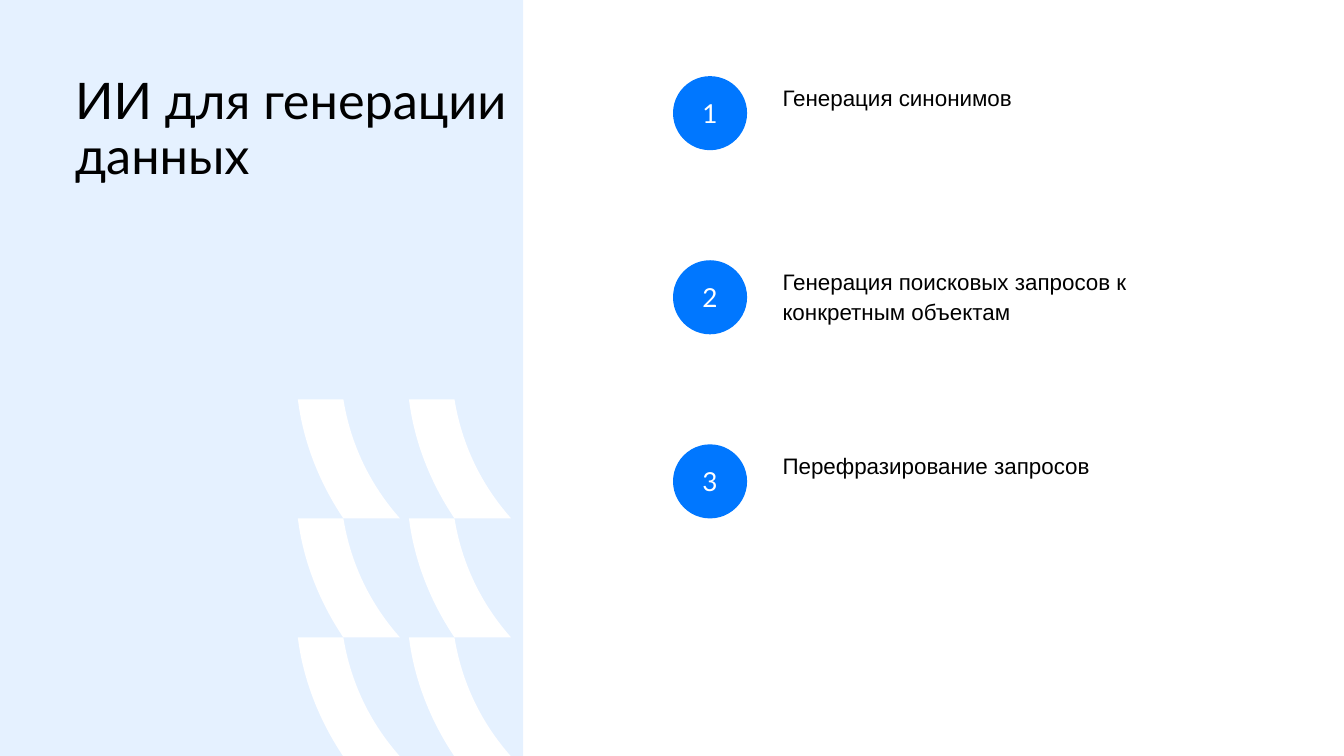
import pptx
import pptx.util
import pptx.dml.color
import pptx.enum.shapes
import pptx.enum.text
import pptx.oxml
import lxml.etree

Cm = pptx.util.Cm
qn = pptx.oxml.ns.qn
ALIGN = pptx.enum.text.PP_ALIGN
ANCHOR = pptx.enum.text.MSO_ANCHOR
SHAPE = pptx.enum.shapes.MSO_SHAPE

TITLE = "ИИ для генерации данных"
ITEMS = [
    "Генерация синонимов",
    "Генерация поисковых запросов к конкретным объектам",
    "Перефразирование запросов",
]

THEME = {
    "accent": "0077FF", "paper": "FFFFFF",
    "title": {"name": "Lato", "size": 27, "color": "000000"},
    "item": {"name": "Arial", "size": 12, "color": "000000"},
    "number": {"name": "Lato", "size": 14, "color": "FFFFFF"},
}

SLIDE_W, SLIDE_H = 25.4, 14.29
PANEL_W = 9.89
TOP, ROW_STEP = 1.44, 3.48
CIRCLE_X, CIRCLE_D = 12.72, 1.4
TEXT_X, TEXT_W, TEXT_H = 14.79, 7.19, 2.57

PATTERN_X, PATTERN_Y = 5.63, 7.55
PATTERN_COLS, PATTERN_ROWS = 2, 3
TILE_DX, TILE_DY = 2.1, 2.25
RIGHT_EDGE = [(0.86, 0), (1.0, 0.86), (1.37, 1.62), (1.93, TILE_DY)]
LEFT_EDGE = [(0.86, TILE_DY), (0.41, 1.58), (0.1, 0.81), (0, 0)]


def rgb(value):
    return pptx.dml.color.RGBColor.from_string(value)


def paint(sp, color, alpha=None):
    sp.shadow.inherit = False
    sp.fill.solid()
    sp.fill.fore_color.rgb = rgb(color)
    sp.line.fill.background()
    if alpha is not None:
        clr = sp._element.spPr.find(qn("a:solidFill"))[0]
        lxml.etree.SubElement(clr, qn("a:alpha")).set("val", str(alpha * 1000))


def write(sp, text, style, frame, para):
    tf = sp.text_frame
    for key, value in {"word_wrap": True, **frame}.items():
        setattr(tf, key, value)
    p = tf.paragraphs[0]
    for key, value in para.items():
        setattr(p, key, value)
    r = p.add_run()
    r.text = text
    for key, value in {"name": style["name"], "size": pptx.util.Pt(style["size"])}.items():
        setattr(r.font, key, value)
    r.font.color.rgb = rgb(style["color"])


def margins(left, top, right, bottom):
    sides = ("left", "top", "right", "bottom")
    return {f"margin_{side}": Cm(v) for side, v in zip(sides, (left, top, right, bottom))}


def points(edge):
    return [(Cm(x), Cm(y)) for x, y in edge]


def bend(segment, edge):
    segment.tag = qn("a:cubicBezTo")
    for pt in list(segment):
        segment.remove(pt)
    for x, y in points(edge[1:]):
        pt = lxml.etree.SubElement(segment, qn("a:pt"))
        pt.set("x", str(int(x)))
        pt.set("y", str(int(y)))


def add_pattern(slide):
    corners = points([RIGHT_EDGE[0], RIGHT_EDGE[-1], LEFT_EDGE[0], LEFT_EDGE[-1]])
    for col in range(PATTERN_COLS):
        for row in range(PATTERN_ROWS):
            builder = slide.shapes.build_freeform(*corners[0])
            builder.add_line_segments(corners[1:], close=True)
            tile = builder.convert_to_shape(
                Cm(PATTERN_X + col * TILE_DX), Cm(PATTERN_Y + row * TILE_DY))
            segments = list(tile._element.iter(qn("a:lnTo")))
            bend(segments[0], RIGHT_EDGE)
            bend(segments[2], LEFT_EDGE)
            paint(tile, THEME["paper"])


def add_title(slide):
    title = slide.shapes.title
    box = {"left": 1.42, "top": TOP, "width": 8.23, "height": 3.48}
    for key, value in box.items():
        setattr(title, key, Cm(value))
    write(title, TITLE, THEME["title"],
          {"vertical_anchor": ANCHOR.TOP, "auto_size": pptx.enum.text.MSO_AUTO_SIZE.NONE,
           **margins(0, 0, 0, 0)},
          {"alignment": ALIGN.LEFT, "line_spacing": 0.9})
    slide.shapes._spTree.append(title._element)


def add_label(slide, index, text):
    label = slide.shapes.add_textbox(
        Cm(TEXT_X), Cm(TOP + index * ROW_STEP), Cm(TEXT_W), Cm(TEXT_H))
    write(label, text, THEME["item"], margins(0, 0.1, 0.18, 0.1), {"line_spacing": 1.1})


def add_number(slide, index):
    circle = slide.shapes.add_shape(
        SHAPE.OVAL, Cm(CIRCLE_X), Cm(TOP + index * ROW_STEP), Cm(CIRCLE_D), Cm(CIRCLE_D))
    paint(circle, THEME["accent"])
    write(circle, str(index + 1), THEME["number"],
          {"vertical_anchor": ANCHOR.MIDDLE, **margins(0.18, 0.1, 0.18, 0.1)},
          {"alignment": ALIGN.CENTER})


def main():
    prs = pptx.Presentation()
    prs.slide_width, prs.slide_height = Cm(SLIDE_W), Cm(SLIDE_H)
    slide = prs.slides.add_slide(prs.slide_layouts.get_by_name("Title Only"))
    panel = slide.shapes.add_shape(SHAPE.RECTANGLE, 0, 0, Cm(PANEL_W), Cm(SLIDE_H))
    paint(panel, THEME["accent"], alpha=10)
    add_pattern(slide)
    add_title(slide)
    for index, text in enumerate(ITEMS):
        add_label(slide, index, text)
    for index in range(len(ITEMS)):
        add_number(slide, index)
    prs.save("out.pptx")


if __name__ == "__main__":
    main()
